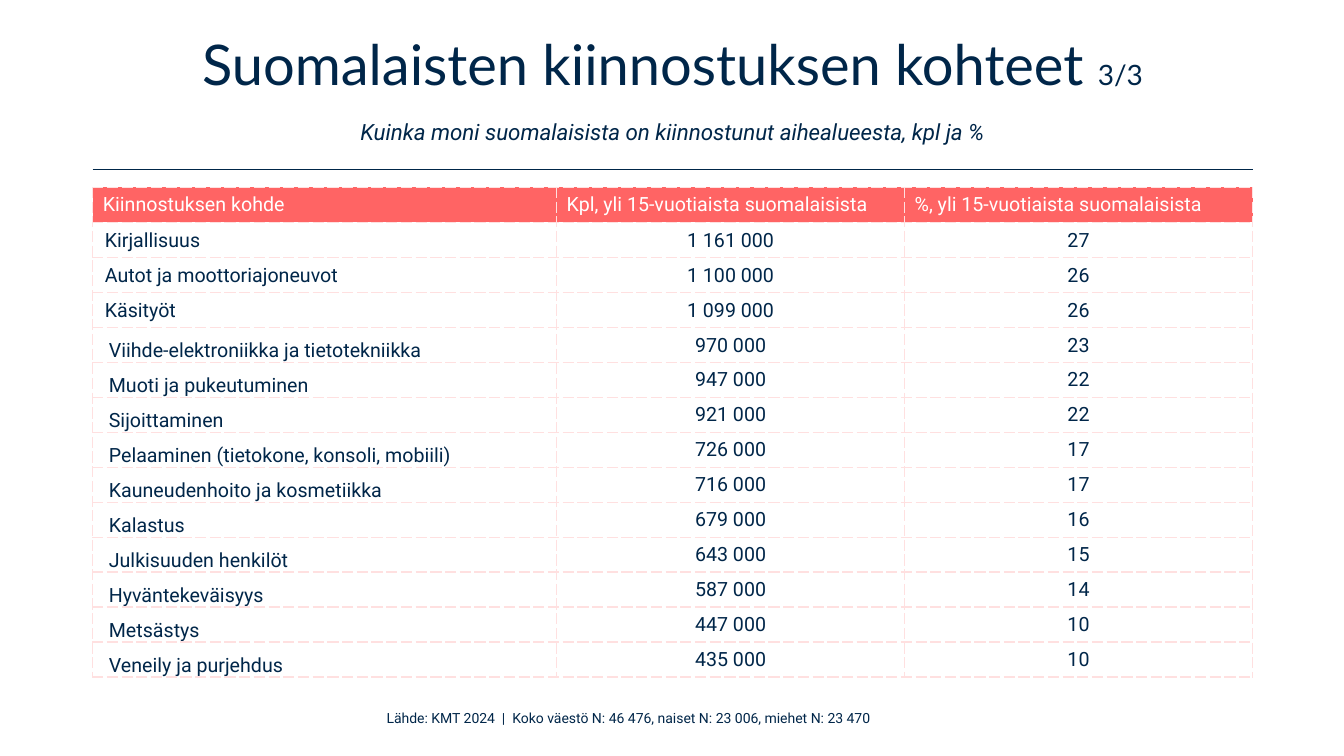
from dataclasses import dataclass

from lxml.etree import SubElement
from pptx import Presentation
from pptx.dml.color import RGBColor
from pptx.enum.shapes import MSO_CONNECTOR
from pptx.enum.text import MSO_ANCHOR, PP_ALIGN
from pptx.oxml.ns import qn
from pptx.util import Inches, Pt


@dataclass(frozen=True)
class Theme:
    navy: str = "002649"
    coral: str = "FF6464"
    blush: str = "FFE0E0"
    white: str = "FFFFFF"
    heading_font: str = "Lato"
    body_font: str = "Roboto"
    title_size: int = 40
    page_size: int = 20
    subtitle_size: int = 16
    table_size: int = 14
    source_size: int = 10


THEME = Theme()
LEFT, WIDTH = 6.9, 86.3  # content column, percent of slide width
COLUMN_SHARES = (0.4, 0.3, 0.3)
HEADER = ("Kiinnostuksen kohde", "Kpl, yli 15-vuotiaista suomalaisista",
          "%, yli 15-vuotiaista suomalaisista")
INTERESTS = (
    ("Kirjallisuus", "1 161 000", 27),
    ("Autot ja moottoriajoneuvot", "1 100 000", 26),
    ("Käsityöt", "1 099 000", 26),
    ("Viihde-elektroniikka ja tietotekniikka", "970 000", 23),
    ("Muoti ja pukeutuminen", "947 000", 22),
    ("Sijoittaminen", "921 000", 22),
    ("Pelaaminen (tietokone, konsoli, mobiili)", "726 000", 17),
    ("Kauneudenhoito ja kosmetiikka", "716 000", 17),
    ("Kalastus", "679 000", 16),
    ("Julkisuuden henkilöt", "643 000", 15),
    ("Hyväntekeväisyys", "587 000", 14),
    ("Metsästys", "447 000", 10),
    ("Veneily ja purjehdus", "435 000", 10),
)
MIDDLE_ANCHORED_ROWS = 3  # later interest names sit at the cell bottom


def add_text(paragraph, text, *, size, font=THEME.body_font, color=THEME.navy,
             italic=False, align=None):
    """Append one formatted run to a paragraph."""
    if align is not None:
        paragraph.alignment = align
    run = paragraph.add_run()
    run.text = text
    run.font.name = font
    run.font.size = Pt(size)
    run.font.italic = italic
    run.font.color.rgb = RGBColor.from_string(color)


class SlideBuilder:
    """Places elements by percent of the slide's size."""

    def __init__(self, presentation, theme):
        self.presentation = presentation
        self.theme = theme
        self.slide = presentation.slides.add_slide(presentation.slide_layouts[6])

    def across(self, percent):
        return round(self.presentation.slide_width * percent / 100)

    def down(self, percent):
        return round(self.presentation.slide_height * percent / 100)

    def area(self, left, top, width, height):
        return self.across(left), self.down(top), self.across(width), self.down(height)

    def text_box(self, *area, anchor=MSO_ANCHOR.TOP):
        frame = self.slide.shapes.add_textbox(*self.area(*area)).text_frame
        frame.word_wrap = True
        frame.vertical_anchor = anchor
        return frame.paragraphs[0]

    def rule(self, left, top, width):
        line = self.slide.shapes.add_connector(
            MSO_CONNECTOR.STRAIGHT, self.across(left), self.down(top),
            self.across(left + width), self.down(top))
        line.line.color.rgb = RGBColor.from_string(self.theme.navy)
        line.line.width = Pt(1)
        SubElement(line._element.spPr, qn("a:effectLst"))

    def border(self, cell):
        properties = cell._tc.get_or_add_tcPr()
        for side in ("lnL", "lnR", "lnT", "lnB"):
            line = SubElement(properties, qn(f"a:{side}"), w=str(Pt(1)))
            fill = SubElement(line, qn("a:solidFill"))
            SubElement(fill, qn("a:srgbClr"), val=self.theme.blush)
            SubElement(line, qn("a:prstDash"), val="sysDash")

    def cell(self, cell, text, *, color, align=PP_ALIGN.LEFT,
             anchor=MSO_ANCHOR.MIDDLE, fill=None, indent=None):
        self.border(cell)
        if fill:
            cell.fill.solid()
            cell.fill.fore_color.rgb = RGBColor.from_string(fill)
        else:
            cell.fill.background()
        cell.vertical_anchor = anchor
        if indent is not None:
            cell.margin_left = Inches(indent)
            cell.margin_right = cell.margin_top = Inches(0.01)
            cell.margin_bottom = 0
        add_text(cell.text_frame.paragraphs[0], text, color=color, align=align,
                 size=self.theme.table_size)

    def table(self, header, records, *area):
        left, top, width, height = self.area(*area)
        row_count = len(records) + 1
        table = self.slide.shapes.add_table(
            row_count, len(header), left, top, width, height).table
        table.first_row = table.horz_banding = False
        for column, share in zip(table.columns, COLUMN_SHARES):
            column.width = round(width * share)
        for row in table.rows:
            row.height = round(height / row_count)

        # Header row
        for index, label in enumerate(header):
            self.cell(table.cell(0, index), label, color=self.theme.white,
                      fill=self.theme.coral)

        # Interest rows
        for row, (interest, *figures) in enumerate(records, start=1):
            centred = row <= MIDDLE_ANCHORED_ROWS
            self.cell(table.cell(row, 0), interest, color=self.theme.navy,
                      anchor=MSO_ANCHOR.MIDDLE if centred else MSO_ANCHOR.BOTTOM,
                      indent=0.12 if centred else 0.16)
            for column, figure in enumerate(figures, start=1):
                self.cell(table.cell(row, column), str(figure), indent=0.01,
                          color=self.theme.navy, align=PP_ALIGN.CENTER)


def main():
    presentation = Presentation()
    presentation.slide_width, presentation.slide_height = Inches(13.33), Inches(7.5)
    builder = SlideBuilder(presentation, THEME)

    # Title and subtitle
    title = builder.text_box(LEFT, 5.6, WIDTH, 14.27, anchor=MSO_ANCHOR.MIDDLE)
    title.line_spacing = Pt(35)
    title.space_after = Pt(18)
    add_text(title, "Suomalaisten kiinnostuksen kohteet ", size=THEME.title_size,
             font=THEME.heading_font, align=PP_ALIGN.CENTER)
    add_text(title, "3/3", size=THEME.page_size, font=THEME.heading_font)
    title.add_line_break()
    add_text(title, "Kuinka moni suomalaisista on kiinnostunut aihealueesta, kpl ja %",
             size=THEME.subtitle_size, italic=True)

    # Rule and table
    builder.rule(LEFT, 22.4, WIDTH)
    builder.table(HEADER, INTERESTS, LEFT, 24.8, WIDTH, 64.8)

    # Source line
    source = builder.text_box(22.5, 93.2, 48.5, 3.6)
    add_text(source, "Lähde: KMT 2024  |  Koko väestö N: 46 476, naiset N: 23 006, "
             "miehet N: 23 470", size=THEME.source_size, align=PP_ALIGN.CENTER)

    presentation.save("out.pptx")


if __name__ == "__main__":
    main()
